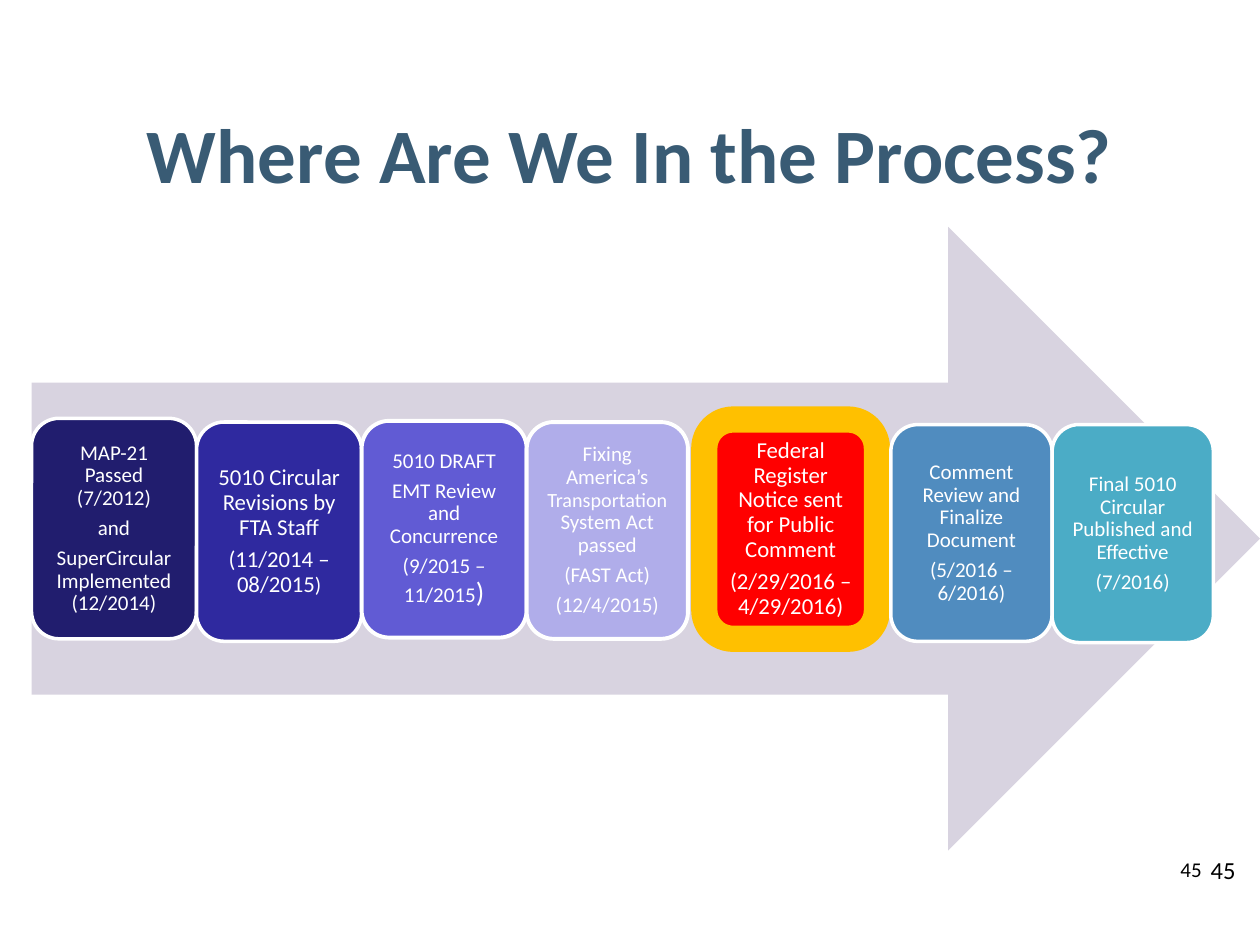
from dataclasses import dataclass

from pptx import Presentation
from pptx.dml.color import RGBColor
from pptx.enum.shapes import MSO_SHAPE
from pptx.enum.text import MSO_ANCHOR, PP_ALIGN
from pptx.util import Pt

EMU_PER_PX = 9144


def px(n):
    return n * EMU_PER_PX


@dataclass(frozen=True)
class Theme:
    font: str = "Calibri"
    title: str = "395B74"
    ink: str = "000000"
    white: str = "FFFFFF"
    arrow: str = "D8D3E0"
    highlight: str = "FFC000"
    title_size: float = 44
    number_size: float = 14
    small_number_size: float = 12
    step_size: float = 12
    large_step_size: float = 13
    tight_size: float = 11.5
    bracket_size: float = 16


THEME = Theme()


def add_run(p, text, size, color, bold=False):
    r = p.add_run()
    r.text = text
    r.font.name = THEME.font
    r.font.size = Pt(size)
    r.font.bold = bold
    r.font.color.rgb = RGBColor.from_string(color)


class SlideBuilder:
    def __init__(self, slide, theme):
        self.s = slide
        self.theme = theme

    def shape(self, kind, box, fill, line=None, width=0):
        sp = self.s.shapes.add_shape(kind, *map(px, box))
        sp.shadow.inherit = False
        sp.fill.solid()
        sp.fill.fore_color.rgb = RGBColor.from_string(fill)
        if line:
            sp.line.color.rgb = RGBColor.from_string(line)
            sp.line.width = Pt(width)
        else:
            sp.line.fill.background()
        return sp

    def label(self, box, text, align=PP_ALIGN.LEFT, anchor=MSO_ANCHOR.TOP, **fmt):
        tf = self.s.shapes.add_textbox(*map(px, box)).text_frame
        tf.word_wrap = True
        tf.vertical_anchor = anchor
        p = tf.paragraphs[0]
        p.alignment = align
        add_run(p, text, **fmt)

    def step(self, box, fill, paragraphs, size, line, width):
        sp = self.shape(MSO_SHAPE.ROUNDED_RECTANGLE, box, fill, line, width)
        tf = sp.text_frame
        tf.word_wrap = True
        tf.vertical_anchor = MSO_ANCHOR.MIDDLE
        tf.margin_left = tf.margin_right = px(9)
        tf.margin_top = tf.margin_bottom = px(9)
        for i, runs in enumerate(paragraphs):
            p = tf.add_paragraph() if i else tf.paragraphs[0]
            p.alignment = PP_ALIGN.CENTER
            p.line_spacing = 0.9
            p.space_after = Pt(round(size * 0.35, 1))
            for text, run_size in runs:
                add_run(p, text, size=run_size or size, color=self.theme.white)


def plain(*texts):
    return [[(text, None)] for text in texts]


def main():
    t = THEME
    prs = Presentation()
    prs.slide_width, prs.slide_height = px(1000), px(750)
    b = SlideBuilder(prs.slides.add_slide(prs.slide_layouts[6]), t)

    b.label((50, 68, 900, 107), "Where Are We In the Process?", PP_ALIGN.CENTER,
            MSO_ANCHOR.MIDDLE, size=t.title_size, color=t.title, bold=True)
    b.shape(MSO_SHAPE.RIGHT_ARROW, (25, 180, 975, 495), t.arrow)

    small, large = t.step_size, t.large_step_size
    steps = [
        ((25, 332, 131, 175), "211D6E", small, t.white, 2,
         plain("MAP-21 Passed (7/2012)", "and",
               "SuperCircular Implemented (12/2014)")),
        ((156, 335, 131, 174), "2F299F", large, t.white, 2,
         plain("5010 Circular Revisions by FTA Staff")
         + [[("(11/2014 – 08/2015", None), (")", small)]]),
        ((287, 334, 131, 172), "615BD4", small, t.white, 2.25,
         plain("5010 DRAFT", "EMT Review and Concurrence")
         + [[("(9/2015 – 11/2015", None), (")", t.bracket_size)]]),
        ((418, 335, 128, 172), "B0ADEA", small, t.white, 2.25,
         [[("Fixing America’s ", None), ("Transportation", t.tight_size),
           (" System Act passed", None)]]
         + plain("(FAST Act)", "(12/4/2015)")),
        ((559, 333, 137, 174), "FF0000", large, t.highlight, 15,
         plain("Federal Register Notice sent for Public Comment",
               "(2/29/2016 – 4/29/2016)")),
        ((707, 337, 128, 172), "508CBF", small, t.white, 2,
         plain("Comment Review and Finalize Document", "(5/2016 – 6/2016)")),
        ((835, 337, 128, 173), "4BACC6", small, t.white, 2,
         plain("Final 5010 Circular Published and Effective", "(7/2016)")),
    ]
    for box, fill, size, line, width, paragraphs in steps:
        b.step(box, fill, paragraphs, size, line, width)

    b.label((927, 675, 57, 77), "45", size=t.small_number_size, color=t.ink)
    b.label((951, 674, 58, 77), "45", size=t.number_size, color=t.ink)
    prs.save("out.pptx")


if __name__ == "__main__":
    main()
